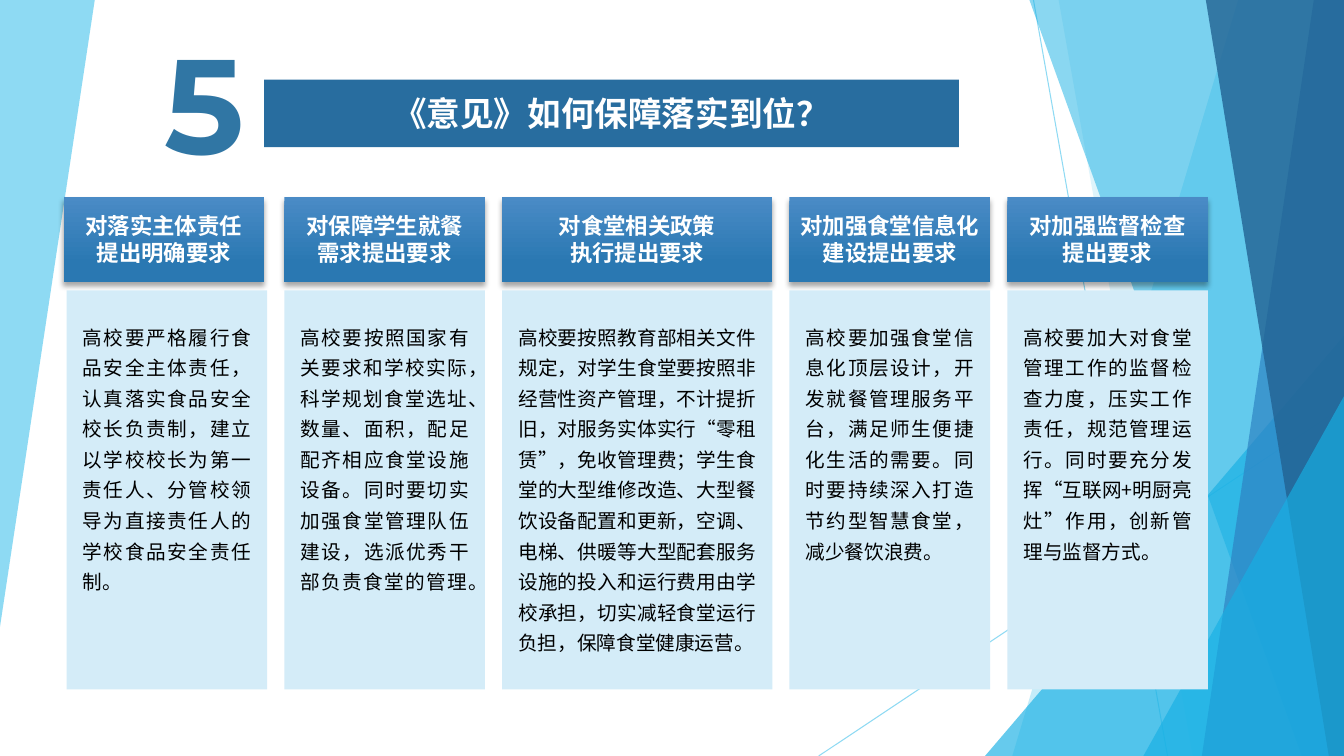
"""Build the slide on how the Opinions are carried out: a numbered title and five columns."""
from lxml.etree import SubElement
from pptx import Presentation
from pptx.dml.color import RGBColor
from pptx.enum.shapes import MSO_CONNECTOR, MSO_SHAPE
from pptx.enum.text import MSO_ANCHOR, MSO_AUTO_SIZE, PP_ALIGN
from pptx.oxml.ns import qn
from pptx.util import Inches, Pt

COLORS = {
    "cyan": "5FCBEF", "azure": "17B0E4", "blue": "2E83C3", "navy": "226292",
    "title": "286D9F", "number": "3076A4", "head_top": "4A8BC6", "head_end": "2A78B2",
    "panel": "D4ECF8", "white": "FFFFFF", "black": "000000",
}
CJK = "Noto Sans CJK SC"
FORMATS = {
    "title": {"size": Pt(24), "bold": True, "name": CJK},
    "number": {"size": Pt(96), "bold": True, "name": "Montserrat"},
    "head": {"size": Pt(16), "bold": True, "name": CJK},
    "body": {"size": Pt(14), "bold": False, "name": CJK},
}


def set_text(sp, lines, style, color, align, anchor, spacing=1.0):
    tf = sp.text_frame
    frame = {"word_wrap": True, "auto_size": MSO_AUTO_SIZE.NONE, "vertical_anchor": anchor}
    for key, value in frame.items():
        setattr(tf, key, value)
    for i, line in enumerate(lines):
        p = tf.add_paragraph() if i else tf.paragraphs[0]
        p.alignment, p.line_spacing = align, spacing
        r = p.add_run()
        r.text = line
        for key, value in FORMATS[style].items():
            setattr(r.font, key, value)
        r.font.color.rgb = RGBColor.from_string(COLORS[color])
        SubElement(r.font._element, qn("a:ea"), typeface=FORMATS[style]["name"])


def set_fill(sp, color, opacity=100):
    sp.shadow.inherit = False
    sp.line.fill.background()
    sp.fill.solid()
    sp.fill.fore_color.rgb = RGBColor.from_string(COLORS[color])
    if opacity < 100:
        clr = sp.fill._xPr.find(".//" + qn("a:srgbClr"))
        SubElement(clr, qn("a:alpha"), val=str(opacity * 1000))


prs = Presentation()
prs.slide_width, prs.slide_height = Inches(13.33), Inches(7.5)
s = prs.slides.add_slide(prs.slide_layouts[5])

W, H = 13.33, 7.5
facets = [
    ([(0, 0), (0.94, 0), (0, 6.22)], "cyan", 70),
    ([(10.25, 0), (11.58, H)], "cyan", 70),
    ([(W, 4.03), (8.12, H)], "cyan", 70),
    ([(12.28, 0), (W, 0), (W, H), (10.04, H)], "cyan", 36),
    ([(10.5, 0), (W, 0), (W, H), (11.83, H)], "cyan", 20),
    ([(9.77, H), (W, 3.33)], "azure", 66),
    ([(10.21, 0), (W, 0), (W, H), (12.91, H)], "azure", 50),
    ([(13.03, 0), (W, 0), (W, H), (11.92, H)], "blue", 70),
    ([(11.96, 0), (W, 0), (W, H), (13.18, H)], "navy", 80),
    ([(11.34, H), (W, 3.93)], "azure", 66),
]
for points, color, opacity in facets:
    pts = [(Inches(x), Inches(y)) for x, y in points]
    (x1, y1), (x2, y2) = pts[0], pts[-1]
    if len(pts) > 2:
        fb = s.shapes.build_freeform(x1, y1)
        fb.add_line_segments(pts[1:], close=True)
        set_fill(fb.convert_to_shape(), color, opacity)
    elif color == "azure":
        sp = s.shapes.add_shape(MSO_SHAPE.ISOSCELES_TRIANGLE, x1, y2, x2 - x1, y1 - y2)
        sp.adjustments[0] = 1
        set_fill(sp, color, opacity)
    else:
        sp = s.shapes.add_connector(MSO_CONNECTOR.STRAIGHT, x1, y1, x2, y2)
        sp.line.width = Pt(0.75)
        sp.line.color.rgb = RGBColor.from_string(COLORS[color])
        spPr = sp._element.spPr
        clr = spPr.find(".//" + qn("a:srgbClr"))
        SubElement(clr, qn("a:alpha"), val=str(opacity * 1000))
        SubElement(spPr, qn("a:effectLst"))

sp = s.shapes.title
box = {"left": 2.62, "top": 0.79, "width": 6.89, "height": 0.67}
for key, value in box.items():
    setattr(sp, key, Inches(value))
geom = SubElement(sp._element.spPr, qn("a:prstGeom"), prst="roundRect")
SubElement(geom, qn("a:avLst"))
sp.fill.solid()
sp.fill.fore_color.rgb = RGBColor.from_string(COLORS["title"])
set_text(sp, ["《意见》如何保障落实到位？"], "title", "white", PP_ALIGN.CENTER, MSO_ANCHOR.MIDDLE)

sp = s.shapes.add_textbox(Inches(1.53), Inches(0.15), Inches(1.08), Inches(1.72))
set_text(sp, ["5"], "number", "number", PP_ALIGN.LEFT, MSO_ANCHOR.TOP)

columns = [
    (1.99, 0.03, ["对落实主体责任", "提出明确要求"],
     "高校要严格履行食品安全主体责任，认真落实食品安全校长负责制，建立以学校校长为第一责任人、"
     "分管校领导为直接责任人的学校食品安全责任制。"),
    (1.99, 0, ["对保障学生就餐", "需求提出要求"],
     "高校要按照国家有关要求和学校实际，科学规划食堂选址、数量、面积，配足配齐相应食堂设施设备。"
     "同时要切实加强食堂管理队伍建设，选派优秀干部负责食堂的管理。"),
    (2.68, 0, ["对食堂相关政策", "执行提出要求"],
     "高校要按照教育部相关文件规定，对学生食堂要按照非经营性资产管理，不计提折旧，"
     "对服务实体实行“零租赁”，免收管理费；学生食堂的大型维修改造、大型餐饮设备配置和更新，"
     "空调、电梯、供暖等大型配套服务设施的投入和运行费用由学校承担，切实减轻食堂运行负担，"
     "保障食堂健康运营。"),
    (1.99, 0, ["对加强食堂信息化建设提出要求"],
     "高校要加强食堂信息化顶层设计，开发就餐管理服务平台，满足师生便捷化生活的需要。"
     "同时要持续深入打造节约型智慧食堂，减少餐饮浪费。"),
    (1.99, 0, ["对加强监督检查", "提出要求"],
     "高校要加大对食堂管理工作的监督检查力度，压实工作责任，规范管理运行。"
     "同时要充分发挥“互联网+明厨亮灶”作用，创新管理与监督方式。"),
]
margins = {"margin_left": 0.16, "margin_top": 0.28, "margin_right": 0.16, "margin_bottom": 0.05}
gap, x = 0.17, 0.66
for width, shift, heading, body in columns:
    sp = s.shapes.add_shape(MSO_SHAPE.RECTANGLE, Inches(x - shift), Inches(1.95),
                            Inches(width), Inches(0.85))
    sp.line.fill.background()
    sp.fill.gradient()
    sp.fill.gradient_angle = 270
    for stop, color, pos in zip(sp.fill.gradient_stops, ("head_top", "head_end"), (0, 0.78)):
        stop.color.rgb = RGBColor.from_string(COLORS[color])
        stop.position = pos
    sp.shadow.inherit = False
    effects = sp._element.spPr.find(qn("a:effectLst"))
    shadow = SubElement(effects, qn("a:outerShdw"), blurRad=str(Pt(4)), dist=str(Pt(3)),
                        dir="5400000", algn="t", rotWithShape="0")
    clr = SubElement(shadow, qn("a:srgbClr"), val=COLORS["black"])
    SubElement(clr, qn("a:alpha"), val="35000")
    set_text(sp, heading, "head", "white", PP_ALIGN.CENTER, MSO_ANCHOR.MIDDLE)

    sp = s.shapes.add_shape(MSO_SHAPE.RECTANGLE, Inches(x), Inches(2.88),
                            Inches(width), Inches(3.96))
    set_fill(sp, "panel")
    for key, value in margins.items():
        setattr(sp.text_frame, key, Inches(value))
    set_text(sp, [body], "body", "black", PP_ALIGN.JUSTIFY, MSO_ANCHOR.TOP, 1.3)
    x += width + gap

prs.save("out.pptx")
